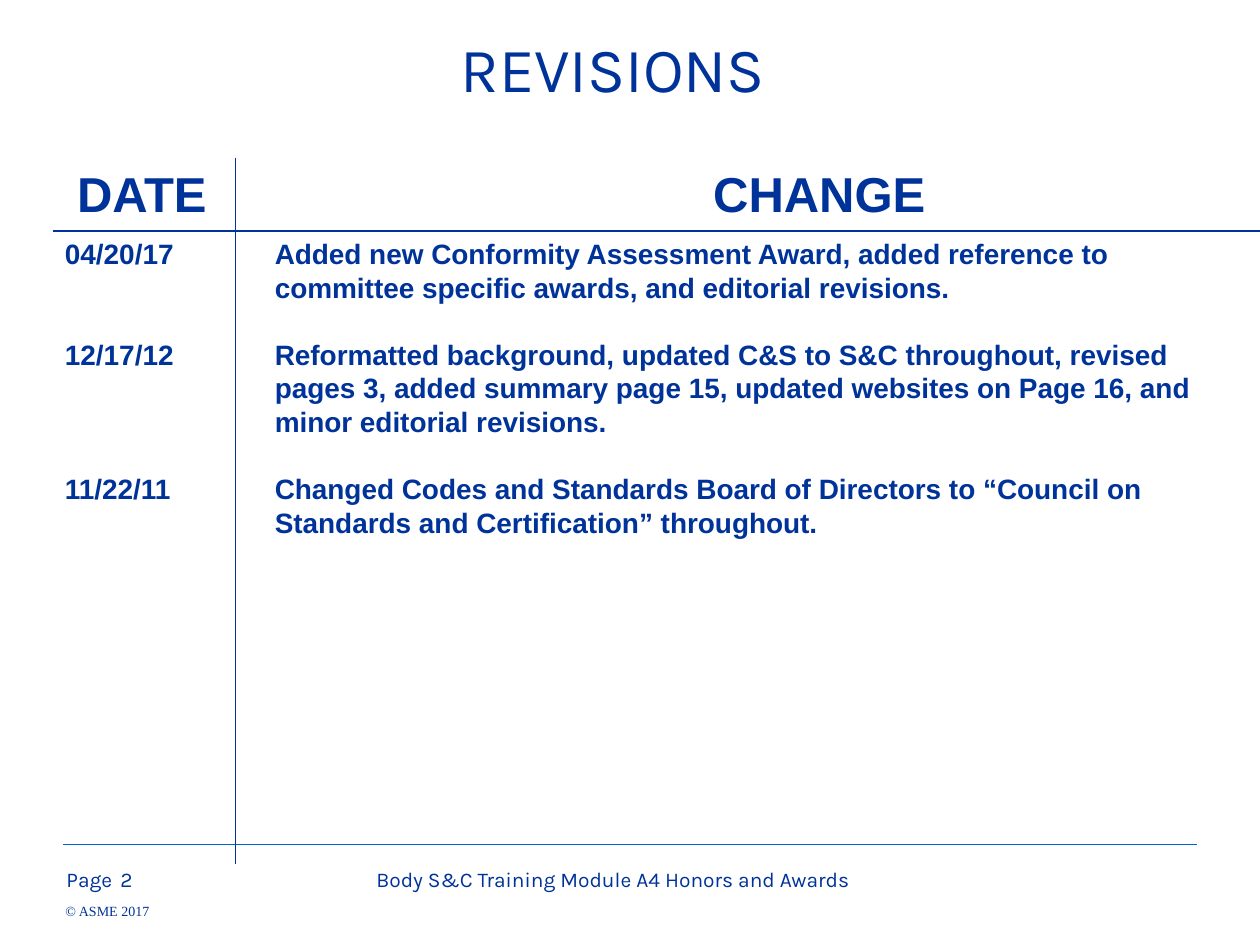
from dataclasses import dataclass, field

from pptx import Presentation
from pptx.dml.color import RGBColor
from pptx.enum.shapes import MSO_CONNECTOR as Connector
from pptx.enum.text import MSO_ANCHOR as Anchor, PP_ALIGN as Align
from pptx.oxml.ns import qn
from pptx.util import Cm, Pt
from lxml.etree import SubElement

NAVY = "003399"
BLUE = "0066CC"
LINE_HEIGHT = 19.1

FOOTER = {"name": "Karla", "size": Pt(12)}
COPYRIGHT = {"name": "Times New Roman", "size": Pt(8)}
TITLE = {"name": "Karla", "size": Pt(36), "bold": False}
HEADING = {"name": "Arial", "size": Pt(28), "bold": True}
BODY = {"name": "Arial", "size": Pt(16), "bold": True}


@dataclass
class Rule:
    start: tuple[float, float]
    end: tuple[float, float]
    color: str
    weight: float


@dataclass
class Label:
    box: tuple[float, float, float, float]
    texts: list[str]
    font: dict
    align: Align = Align.LEFT
    gaps: list[float] = field(default_factory=list)
    frame: dict = field(default_factory=lambda: {"word_wrap": True})


@dataclass
class Revision:
    date: str
    change: str
    lines: int


REVISIONS = [
    Revision("04/20/17", "Added new Conformity Assessment Award, added reference to "
             "committee specific awards, and editorial revisions.", 2),
    Revision("12/17/12", "Reformatted background, updated C&S to S&C throughout, revised "
             "pages 3, added summary page 15, updated websites on Page 16, and "
             "minor editorial revisions.", 3),
    Revision("11/22/11", "Changed Codes and Standards Board of Directors to “Council on "
             "Standards and Certification” throughout.", 2),
]
DATE_GAPS = [revision.lines * LINE_HEIGHT for revision in REVISIONS[:-1]]
CHANGE_GAPS = [LINE_HEIGHT] * (len(REVISIONS) - 1)
NO_MARGINS = {f"margin_{side}": 0 for side in ("left", "top", "right", "bottom")}

RULES = [
    Rule((1.27, 17.02), (24.13, 17.02), BLUE, 0.75),
    Rule((4.75, 3.18), (4.75, 17.42), NAVY, 1),
    Rule((1.06, 4.65), (25.4, 4.65), NAVY, 1),
]

LABELS = [
    Label((1.09, 17.35, 5.92, 1.32), ["Page"], FOOTER),
    Label((1.32, 18.19, 1.73, 0.33), ["© ASME 2017"], COPYRIGHT,
          frame={"word_wrap": False, **NO_MARGINS}),
    Label((3.89, 17.35, 16.94, 1.32), ["Body S&C Training Module A4 Honors and Awards"],
          FOOTER, Align.CENTER),
    Label((2.18, 17.35, 1.19, 1.32), ["2"], FOOTER),
    Label((8.26, 3.18, 16.51, 1.5), ["CHANGE"], HEADING, Align.CENTER),
    Label((1.06, 3.18, 3.6, 1.5), ["DATE"], HEADING, Align.CENTER),
    Label((5.29, 4.65, 20.11, 12.75), [revision.change for revision in REVISIONS],
          BODY, gaps=CHANGE_GAPS),
    Label((1.06, 4.65, 3.69, 12.75), [revision.date for revision in REVISIONS],
          BODY, gaps=DATE_GAPS),
]


def rgb(color: str) -> RGBColor:
    return RGBColor.from_string(color)


def apply(target, values: dict) -> None:
    for name, value in values.items():
        setattr(target, name, value)


def write(shape, label: Label) -> None:
    text_frame = shape.text_frame
    apply(text_frame, label.frame)
    text_frame.text = "\n".join(label.texts)
    for paragraph in text_frame.paragraphs:
        paragraph.alignment = label.align
        apply(paragraph.font, label.font)
        paragraph.font.color.rgb = rgb(NAVY)
    for paragraph, gap in zip(text_frame.paragraphs[1:], label.gaps):
        paragraph.space_before = Pt(gap)


def draw_label(slide, label: Label) -> None:
    write(slide.shapes.add_textbox(*map(Cm, label.box)), label)


def draw_rule(slide, rule: Rule) -> None:
    line = slide.shapes.add_connector(
        Connector.STRAIGHT, *map(Cm, rule.start + rule.end))
    line.line.color.rgb = rgb(rule.color)
    line.line.width = Pt(rule.weight)
    SubElement(line._element.spPr, qn("a:effectLst"))


def draw_title(slide, label: Label) -> None:
    title = slide.shapes.title
    apply(title, dict(zip(("left", "top", "width", "height"), map(Cm, label.box))))
    write(title, label)


def main() -> None:
    presentation = Presentation()
    apply(presentation, {"slide_width": Cm(25.4), "slide_height": Cm(19.05)})
    slide = presentation.slides.add_slide(presentation.slide_layouts[5])
    draw_title(slide, Label((1.24, 0.3, 22.23, 2.11), ["REVISIONS"], TITLE, Align.CENTER,
                            frame={"word_wrap": True, "vertical_anchor": Anchor.MIDDLE}))
    for label in LABELS:
        draw_label(slide, label)
    for rule in RULES:
        draw_rule(slide, rule)
    presentation.save("out.pptx")


if __name__ == "__main__":
    main()
